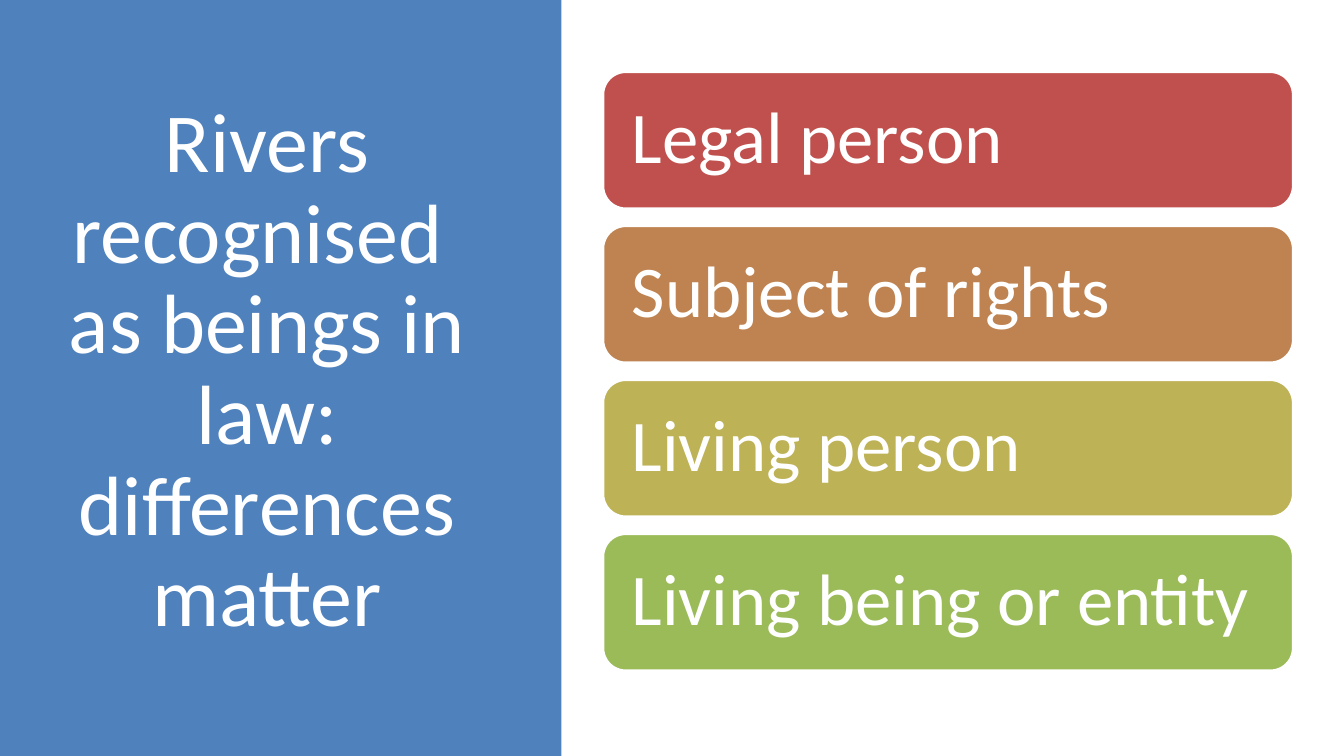
"""Build a slide listing the ways rivers are recognised as beings in law."""
from dataclasses import dataclass

from pptx import Presentation
from pptx import util as u
from pptx.dml.color import RGBColor
from pptx.enum import shapes, text


@dataclass(frozen=True)
class Theme:
    font: str = "Calibri"
    title_size: int = 60
    card_size: int = 52
    line_spacing: float = 0.9
    panel: str = "4F81BD"
    white: str = "FFFFFF"
    cards: tuple = ("C0504D", "BE8351", "BDB255", "9BBB59")


class SlideBuilder:
    def __init__(self, slide, theme):
        self.slide = slide
        self.theme = theme

    def set_wording(self, shape, wording, size, alignment):
        frame = shape.text_frame
        frame.text = wording
        frame.word_wrap = True
        frame.auto_size = text.MSO_AUTO_SIZE.NONE
        frame.vertical_anchor = text.MSO_ANCHOR.MIDDLE
        paragraph = frame.paragraphs[0]
        paragraph.alignment = alignment
        paragraph.line_spacing = self.theme.line_spacing
        for run in paragraph.runs:
            run.font.name = self.theme.font
            run.font.size = u.Pt(size)
            run.font.color.rgb = RGBColor.from_string(self.theme.white)

    def block(self, kind, box, fill):
        shape = self.slide.shapes.add_shape(kind, *map(u.Pt, box))
        shape.shadow.inherit = False
        shape.fill.solid()
        shape.fill.fore_color.rgb = RGBColor.from_string(fill)
        shape.line.fill.background()
        return shape

    def panel(self, box):
        self.block(shapes.MSO_SHAPE.RECTANGLE, box, self.theme.panel)

    def title(self, wording, box):
        title = self.slide.shapes.title
        title.left, title.top, title.width, title.height = map(u.Pt, box)
        self.set_wording(title, wording, self.theme.title_size, text.PP_ALIGN.CENTER)
        title.element.getparent().append(title.element)

    def card(self, wording, box, fill):
        card = self.block(shapes.MSO_SHAPE.ROUNDED_RECTANGLE, box, fill)
        card.line.color.rgb = RGBColor.from_string(self.theme.white)
        card.line.width = u.Pt(2)
        frame = card.text_frame
        frame.margin_left = frame.margin_right = u.Pt(15.8)
        self.set_wording(card, wording, self.theme.card_size, text.PP_ALIGN.LEFT)


def main():
    presentation = Presentation()
    presentation.slide_width = u.Pt(960)
    presentation.slide_height = u.Pt(540)
    slide = presentation.slides.add_slide(presentation.slide_layouts[5])
    theme = Theme()
    builder = SlideBuilder(slide, theme)

    builder.panel((0, 0, 401, 540))
    builder.title(
        "Rivers recognised \vas beings in law: differences matter",
        (41, 49, 299.5, 433.5),
    )

    statuses = (
        "Legal person",
        "Subject of rights",
        "Living person",
        "Living being or entity",
    )
    card_top, card_pitch = 51.2, 110
    for row, (status, fill) in enumerate(zip(statuses, theme.cards)):
        builder.card(status, (430.6, card_top + row * card_pitch, 493.2, 98), fill)

    presentation.save("out.pptx")


if __name__ == "__main__":
    main()
